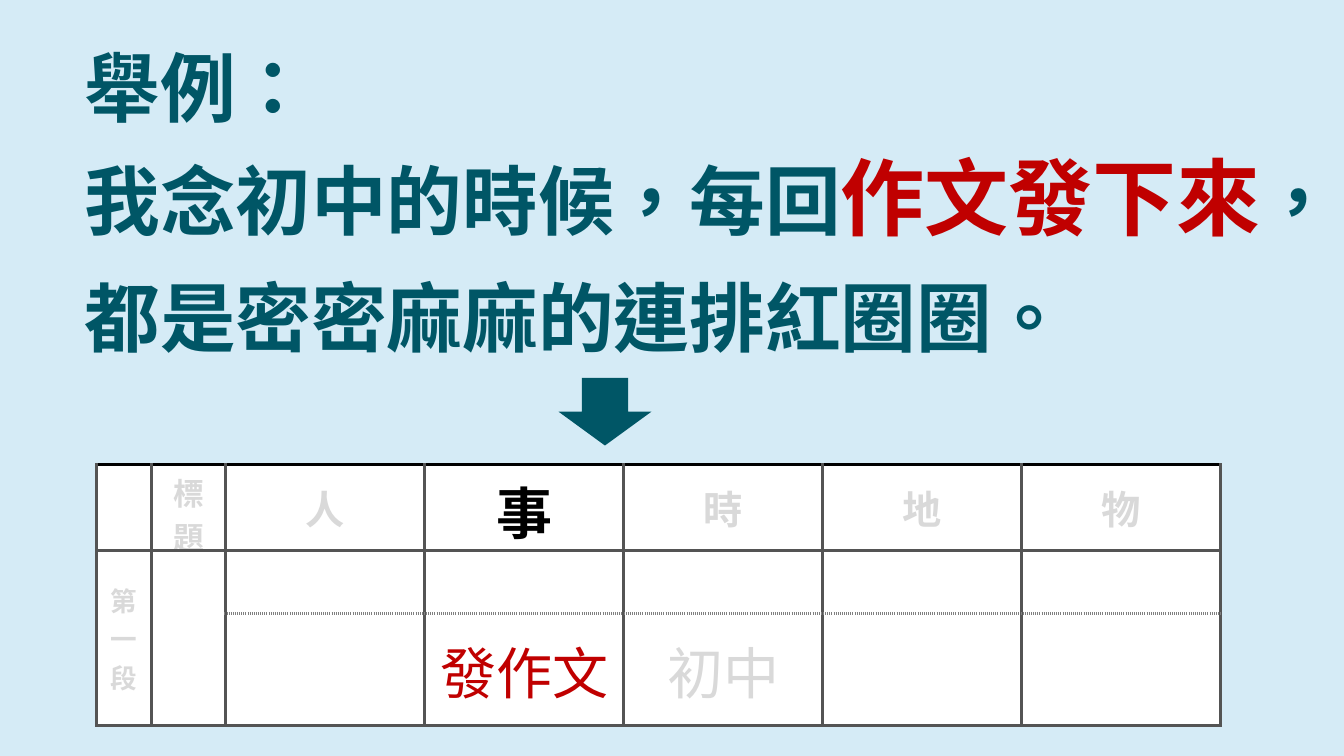
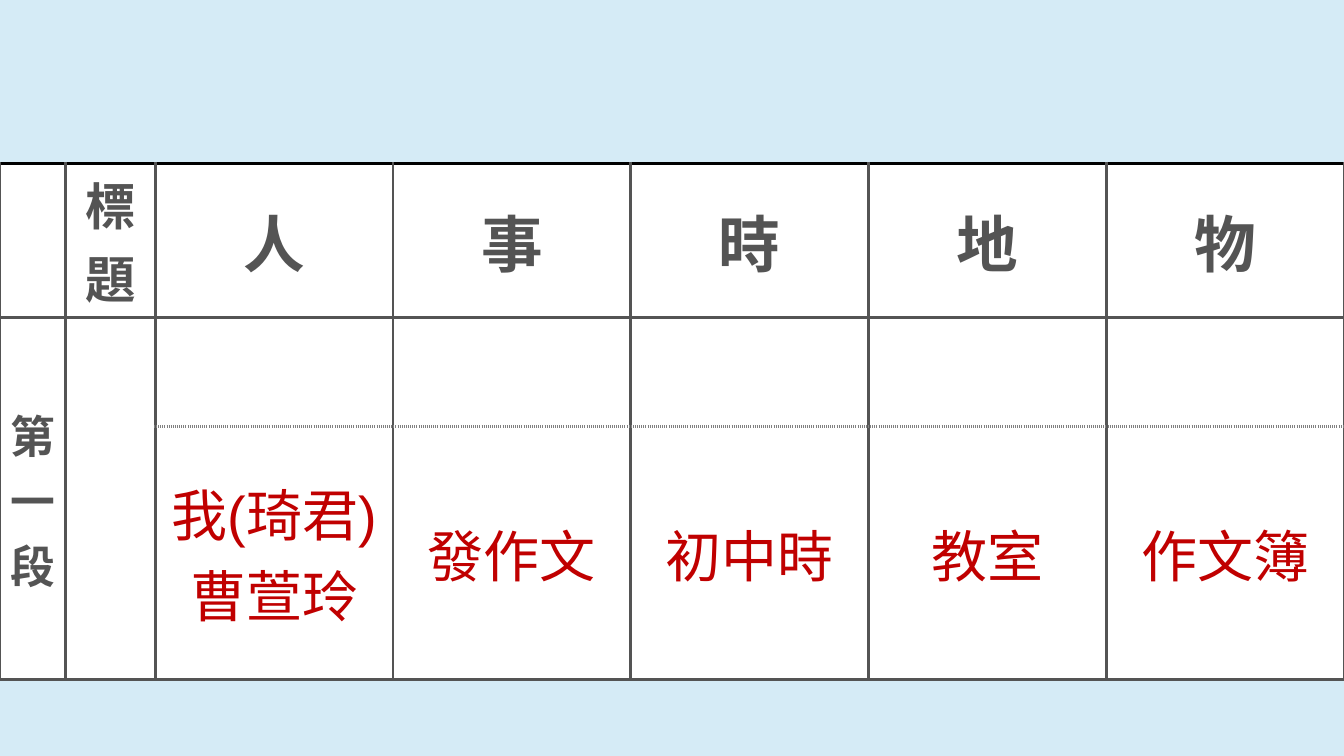
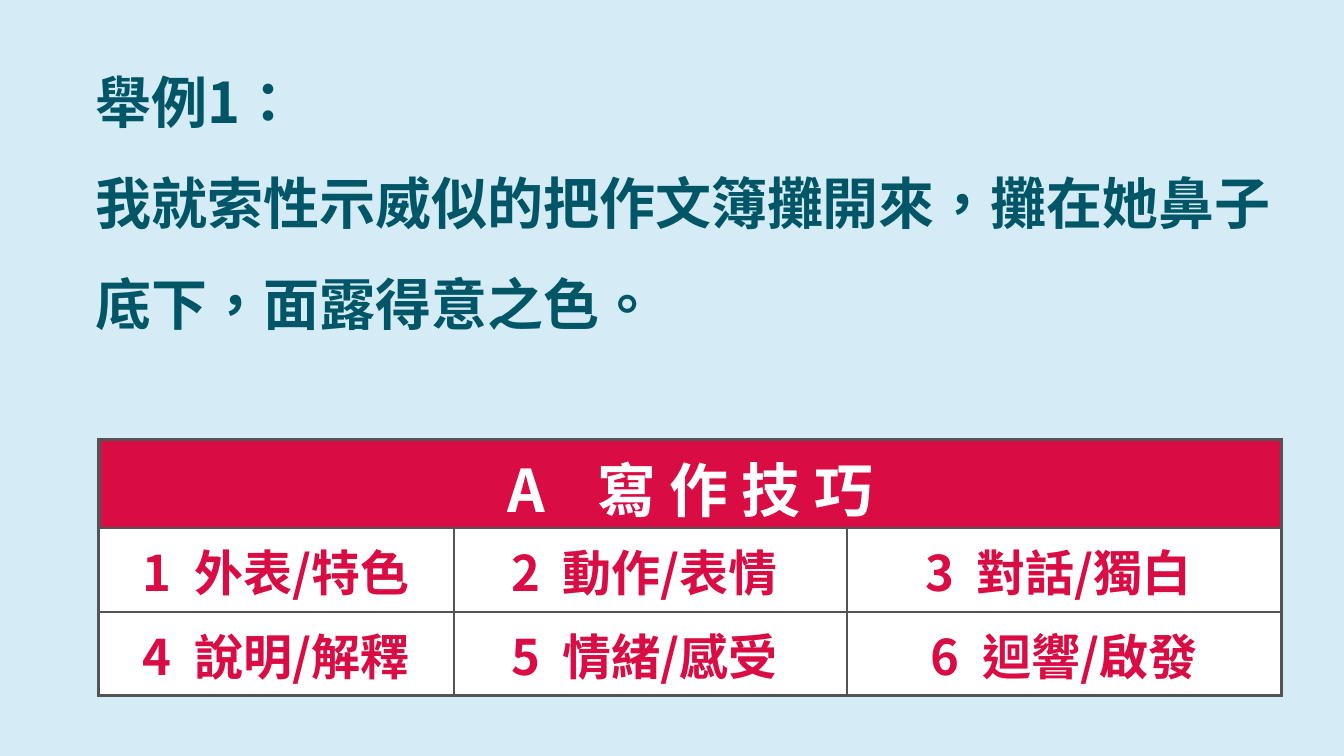
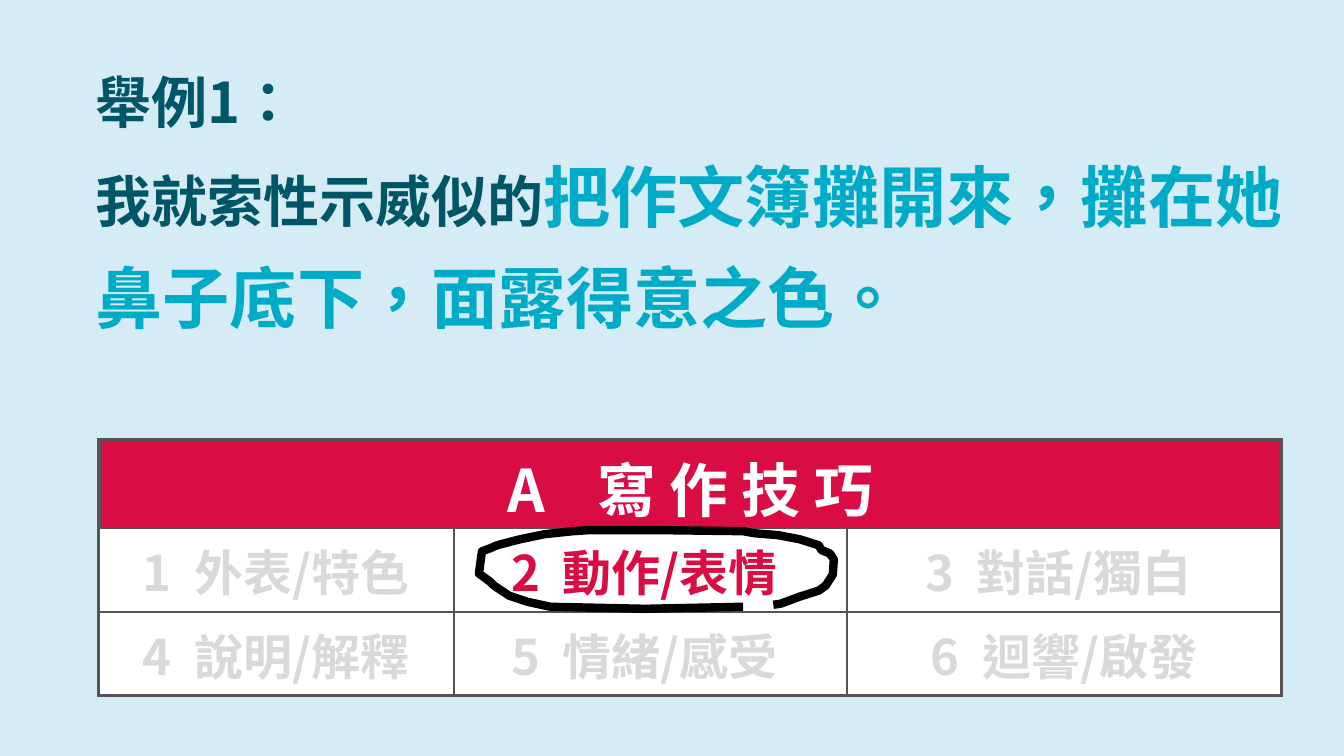
import pptx
import pptx.dml.color
import pptx.enum.shapes
import pptx.enum.text
import pptx.oxml.ns
import pptx.util
from lxml import etree
from pptx.util import Inches

COLORS = {
    "sky": "D5EBF6", "teal": "005666", "cyan": "00ABC8", "red": "C00000",
    "crimson": "DA0C44", "faded": "D9D9D9", "dark": "545454",
    "dots": "808080", "black": "000000", "white": "FFFFFF",
}
HEADING_FONT = "Noto Sans CJK SC"
ANSWER_FONT = "Arial"
CENTER = pptx.enum.text.PP_ALIGN.CENTER


def write(frame, paragraphs, bold=True, align=None, spacing=None, gap=0):
    """Write paragraphs of (text, size, color) runs; gap widens a lone space."""
    for index, runs in enumerate(paragraphs):
        paragraph = frame.add_paragraph() if index else frame.paragraphs[0]
        paragraph.alignment = align
        if spacing:
            paragraph.line_spacing = pptx.util.Pt(spacing)
        for text, size, color in runs:
            run = paragraph.add_run()
            run.text = text
            run.font.size = pptx.util.Pt(size)
            run.font.bold = bold
            run.font.name = HEADING_FONT if bold else ANSWER_FONT
            run.font.color.rgb = pptx.dml.color.RGBColor.from_string(COLORS[color])
            props = run.font._element
            props.set("lang", "zh-TW")
            east_asian = etree.SubElement(props, pptx.oxml.ns.qn("a:ea"))
            east_asian.set("typeface", HEADING_FONT)
            if text == " " and gap:
                props.set("spc", str(gap * 100))


def style_cell(cell, fill, borders, margins):
    """Fill a cell and draw its (color, width, dash) borders: left, right, top, bottom."""
    cell.fill.solid()
    cell.fill.fore_color.rgb = pptx.dml.color.RGBColor.from_string(COLORS[fill])
    cell.vertical_anchor = pptx.enum.text.MSO_ANCHOR.MIDDLE
    cell.margin_left = cell.margin_right = Inches(margins[0])
    cell.margin_top = cell.margin_bottom = Inches(margins[1])
    props = cell._tc.get_or_add_tcPr()
    for index, (side, (color, width, dash)) in enumerate(zip("LRTB", borders)):
        line = etree.Element(pptx.oxml.ns.qn("a:ln" + side), w=str(pptx.util.Pt(width)))
        solid = etree.SubElement(line, pptx.oxml.ns.qn("a:solidFill"))
        etree.SubElement(solid, pptx.oxml.ns.qn("a:srgbClr"), val=COLORS[color])
        etree.SubElement(line, pptx.oxml.ns.qn("a:prstDash"), val=dash)
        props.insert(index, line)


deck = pptx.Presentation()
deck.slide_width, deck.slide_height = Inches(13.33), Inches(7.5)
slides = []
for _ in range(4):
    slide = deck.slides.add_slide(deck.slide_layouts[6])
    slide.background.fill.solid()
    slide.background.fill.fore_color.rgb = pptx.dml.color.RGBColor.from_string(COLORS["sky"])
    slides.append(slide)

# Example passages
passages = [
    (slides[0], (0.74, 0.12, 12.33, 3.44), 82, [
        [("舉例：", 54, "teal")],
        [("我念初中的時候，每回", 54, "teal"), ("作文發下來", 60, "red"),
         ("，都是密密麻麻的連排紅圈圈。", 54, "teal")]]),
    (slides[2], (0.85, 0.29, 12.33, 3.01), 72, [
        [("舉例1：", 40, "teal")],
        [("我就索性示威似的把作文簿攤開來，攤在她鼻子底下，面露得意之色。", 40, "teal")]]),
    (slides[3], (0.85, 0.29, 12.33, 3.01), 72, [
        [("舉例1：", 40, "teal")],
        [("我就索性示威似的", 40, "teal"),
         ("把作文簿攤開來，攤在她鼻子底下，面露得意之色。", 48, "cyan")]]),
]
for slide, place, spacing, paragraphs in passages:
    passage = slide.shapes.add_textbox(*map(Inches, place)).text_frame
    passage.word_wrap = True
    passage.auto_size = pptx.enum.text.MSO_AUTO_SIZE.SHAPE_TO_FIT_TEXT
    write(passage, paragraphs, spacing=spacing)

# Arrow from the passage to its analysis
arrow = slides[0].shapes.add_shape(
    pptx.enum.shapes.MSO_SHAPE.DOWN_ARROW,
    Inches(5.54), Inches(3.75), Inches(0.92), Inches(0.67))
arrow.shadow.inherit = False
arrow.fill.solid()
arrow.fill.fore_color.rgb = pptx.dml.color.RGBColor.from_string(COLORS["teal"])
arrow.line.fill.background()

# Analysis tables: person, event, time, place, thing
analyses = [
    {"slide": slides[0], "place": (0.96, 4.61, 11.15, 2.59), "narrow": [0.54, 0.74],
     "rows": [0.85, 0.63, 1.11], "color": "faded", "sizes": (22, 28, 19),
     "margins": (0.11, 0.05), "label_margins": (0.14, 0.07), "answer_margins": (0.11, 0.05),
     "focus": "事",
     "answers": {3: [("發作文", 40, "red")], 4: [("初中", 40, "faded")]}},
    {"slide": slides[1], "place": (0, 1.62, 13.33, 5.12), "narrow": [0.65, 0.89],
     "rows": [1.53, 1.08, 2.51], "color": "dark", "sizes": (36, 44, 32),
     "margins": (0.08, 0.04), "label_margins": (0.1, 0.05), "answer_margins": (0.1, 0.05),
     "focus": None,
     "answers": {2: [("我(琦君)", 40, "red"), ("曹萱玲", 40, "red")],
                 3: [("發作文", 40, "red")], 4: [("初中時", 40, "red")],
                 5: [("教室", 40, "red")], 6: [("作文簿", 40, "red")]}},
]
edge, top_edge, dotted = ("dark", 2.25, "solid"), ("black", 2.25, "solid"), ("dots", 2.25, "sysDot")
for analysis in analyses:
    table = analysis["slide"].shapes.add_table(3, 7, *map(Inches, analysis["place"])).table
    table.first_row = table.horz_banding = False
    wide = (analysis["place"][2] - sum(analysis["narrow"])) / 5
    for column, width in zip(table.columns, analysis["narrow"] + [wide] * 5):
        column.width = Inches(width)
    for row, height in zip(table.rows, analysis["rows"]):
        row.height = Inches(height)
    for r in range(3):
        for c in range(7):
            margins = analysis["margins"] if r == 0 else analysis["answer_margins"]
            if c == 0 and r:
                margins = analysis["label_margins"]
            above = top_edge if r == 0 else dotted if r == 2 and c > 1 else edge
            below = dotted if r == 1 and c > 1 else edge
            style_cell(table.cell(r, c), "white", (edge, edge, above, below), margins)
    for c in (0, 1):
        table.cell(1, c).merge(table.cell(2, c))
    title_size, heading_size, label_size = analysis["sizes"]
    color = analysis["color"]
    write(table.cell(0, 1).text_frame, [[("標 題", title_size, color)]], align=CENTER)
    for c, heading in enumerate("人事時地物", 2):
        run = (heading, 40, "black") if heading == analysis["focus"] else (heading, heading_size, color)
        write(table.cell(0, c).text_frame, [[run]], align=CENTER)
    write(table.cell(1, 0).text_frame, [[(mark, label_size, color)] for mark in "第一段"], align=CENTER)
    for c, lines in analysis["answers"].items():
        write(table.cell(2, c).text_frame, [[line] for line in lines], bold=False, align=CENTER)

# Writing technique tables; the second one keeps only one technique lit
techniques = ["外表/特色", "動作/表情 ", "對話/獨白 ", "說明/解釋", "情緒/感受 ", "迴響/啟發"]
frame_line, outer, inner = (("dark", width, "solid") for width in (3, 2.25, 1.5))
for slide, lit in ((slides[2], range(1, 7)), (slides[3], [2])):
    table = slide.shapes.add_table(3, 3, Inches(0.98), Inches(4.36), Inches(11.73), Inches(2.54)).table
    table.first_row = table.horz_banding = False
    for column, width in zip(table.columns, (3.52, 3.9, 4.31)):
        column.width = Inches(width)
    for row, height in zip(table.rows, (0.88, 0.83, 0.83)):
        row.height = Inches(height)
    for c in range(3):
        style_cell(table.cell(0, c), "crimson", (frame_line, frame_line, frame_line, inner), (0.1, 0.05))
    table.cell(0, 0).merge(table.cell(0, 2))
    write(table.cell(0, 0).text_frame,
          [[("A", 42, "white"), (" ", 42, "white"), ("寫 作 技 巧", 42, "white")]],
          align=CENTER, gap=28)
    for number, technique in enumerate(techniques, 1):
        r, c = divmod(number - 1, 3)
        cell = table.cell(r + 1, c)
        borders = (outer if c == 0 else inner, outer if c == 2 else inner,
                   inner, outer if r == 1 else inner)
        style_cell(cell, "white", borders, (0.1, 0.05))
        color = "crimson" if number in lit else "faded"
        write(cell.text_frame,
              [[(text, 35, color) for text in (str(number), " ", technique)]],
              align=CENTER, gap=8)

# Hand-drawn ring around the lit technique
ring_points = [
    (7.37, 6.02), (6.4, 6.04), (5.46, 6.02), (5.23, 5.97), (5.05, 5.91), (4.9, 5.81),
    (4.86, 5.77), (4.75, 5.69), (4.78, 5.47), (4.86, 5.44), (4.93, 5.41), (5.08, 5.37),
    (5.16, 5.35), (5.4, 5.3), (5.68, 5.27), (5.83, 5.26), (6.6, 5.26), (7.37, 5.27),
    (7.48, 5.29), (7.72, 5.31), (7.93, 5.35), (8.12, 5.41), (8.15, 5.46), (8.23, 5.49),
    (8.27, 5.55), (8.26, 5.7), (8.19, 5.81), (8.12, 5.86), (7.93, 5.92), (7.74, 5.99), (7.67, 6),
]
ring_points = [(Inches(x), Inches(y)) for x, y in ring_points]
outline = slides[3].shapes.build_freeform(*ring_points[0])
outline.add_line_segments(ring_points[1:], close=False)
ring = outline.convert_to_shape()
ring.shadow.inherit = False
ring.fill.background()
ring.line.width = pptx.util.Pt(6)
ring.line.color.rgb = pptx.dml.color.RGBColor.from_string(COLORS["black"])

deck.save("out.pptx")
